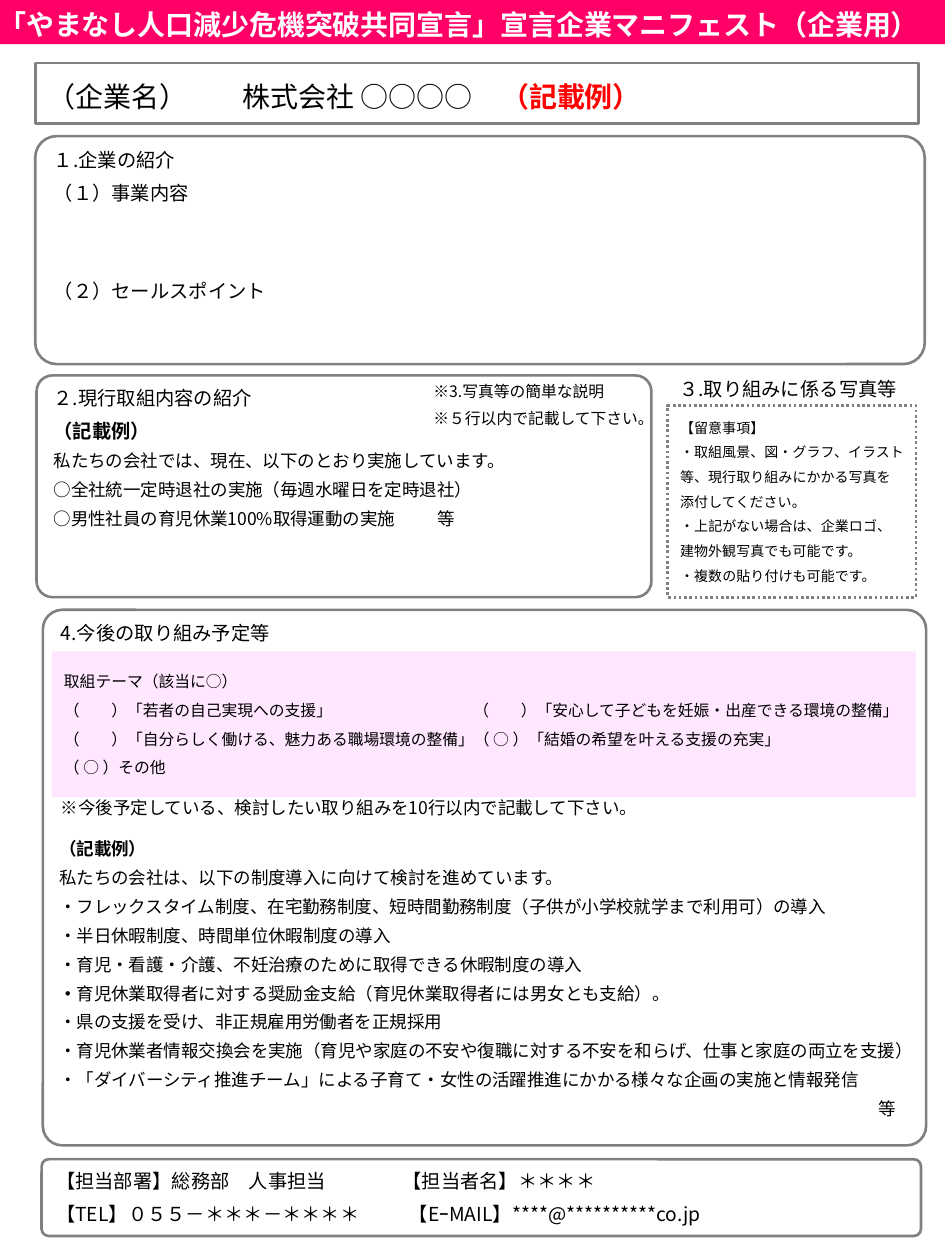
import pptx
import pptx.util
import pptx.dml.color
import pptx.enum.dml
import pptx.enum.shapes
import pptx.enum.text
from dataclasses import dataclass
from lxml import etree

Inches, Pt = pptx.util.Inches, pptx.util.Pt
RGB = pptx.dml.color.RGBColor.from_string
SHAPE = pptx.enum.shapes.MSO_SHAPE
ANCHOR = pptx.enum.text.MSO_ANCHOR
ALIGN = pptx.enum.text.PP_ALIGN
NS = "{http://schemas.openxmlformats.org/drawingml/2006/main}"


@dataclass
class Theme:
    font: str = "Noto Sans CJK JP"
    alt_font: str = "Arial"
    ink: str = "000000"
    paper: str = "FFFFFF"
    border: str = "808080"
    banner: str = "FF0066"
    panel: str = "FFE7FF"
    accent: str = "FF0000"
    title: float = 16
    heading: float = 11
    body: float = 10
    note: float = 9
    small: float = 8
    rule: float = 1.5


T = Theme()


def box(at, kind=None, fill=None, line=None, adj=None, anchor=ANCHOR.TOP, ins=(0.1, 0.05, 0.1, 0.05)):
    """Add a shape, or a text box when no kind is given."""
    at = [Inches(v) for v in at]
    if kind is None:
        sp = s.shapes.add_textbox(*at)
    else:
        sp = s.shapes.add_shape(kind, *at)
        sp.shadow.inherit = False
        if adj is not None:
            sp.adjustments[0] = adj
        if fill:
            sp.fill.solid()
            sp.fill.fore_color.rgb = RGB(fill)
        else:
            sp.fill.background()
        if line:
            sp.line.color.rgb = RGB(line)
            sp.line.width = Pt(T.rule)
        else:
            sp.line.fill.background()
    tf = sp.text_frame
    tf.word_wrap = True
    tf.vertical_anchor = anchor
    tf.margin_left, tf.margin_top, tf.margin_right, tf.margin_bottom = [Inches(v) for v in ins]
    return sp


def write(sp, lines, size, gap=5.5, color=T.ink, bold=None, align=ALIGN.LEFT, tab=None):
    """Append one paragraph per line; a line is a string or a list of runs."""
    tf = sp.text_frame
    for line in lines:
        first = not tf.paragraphs[0].runs
        p = tf.paragraphs[0] if first else tf.add_paragraph()
        p.alignment = align
        if not first:
            p.space_before = Pt(gap)
        if tab:
            tabs = etree.SubElement(p._p.get_or_add_pPr(), NS + "tabLst")
            etree.SubElement(tabs, NS + "tab", pos=str(Inches(tab)), algn="l")
        p.font.size = Pt(size)
        p.font.name = T.font
        p.font.bold = bold
        p.font.color.rgb = RGB(color)
        latin = p.font._element.find(NS + "latin")
        latin.addnext(etree.Element(NS + "ea", typeface=T.font))
        for text in [line] if isinstance(line, str) else line:
            r = p.add_run()
            r.text = text
    return p


prs = pptx.Presentation()
prs.slide_width, prs.slide_height = Inches(7.5), Inches(10)
s = prs.slides.add_slide(prs.slide_layouts[6])
card = dict(kind=SHAPE.ROUNDED_RECTANGLE, fill=T.paper, line=T.border)

# 1. Company introduction
sp = box((0.28, 1.08, 7.06, 1.81), adj=0.094, **card)
write(sp, ["１.企業の紹介", "（１）事業内容"], T.heading)
write(sp, ["（２）セールスポイント"], T.heading, gap=43)

# 4. Future plans
sp = box((0.34, 4.84, 7.01, 4.25), adj=0.036, **card)
write(sp, ["4.今後の取り組み予定等"], T.heading)
write(sp, ["※今後予定している、検討したい取り組みを10行以内で記載して下さい。"], T.body, gap=87)

# Company name
sp = box((0.28, 0.5, 7.01, 0.48), SHAPE.RECTANGLE, T.paper, T.border,
         anchor=ANCHOR.MIDDLE, ins=(0.1, 0.05, 0.1, 0))
p = write(sp, [["（企業名）\t株式会社 ○○○○", "\t（記載例）"]], T.title, tab=1.55)
etree.SubElement(p._p.pPr.find(NS + "tabLst"), NS + "tab", pos=str(Inches(3.6)), algn="l")
p.runs[1].font.bold = True
p.runs[1].font.color.rgb = RGB(T.accent)

# 2. Current activities
sp = box((0.29, 2.98, 4.88, 1.76), adj=0.072, **card)
write(sp, ["２.現行取組内容の紹介"], T.heading)
p = write(sp, ["（記載例）"], T.heading, bold=True)
p.font.name = T.alt_font
write(sp, ["私たちの会社では、現在、以下のとおり実施しています。",
           "○全社統一定時退社の実施（毎週水曜日を定時退社）",
           "○男性社員の育児休業100%取得運動の実施\t等"], T.body, gap=4.5, tab=3.05)

sp = box((3.44, 3.03, 1.89, 0.48), ins=(0, 0, 0, 0))
write(sp, ["※3.写真等の簡単な説明", "※５行以内で記載して下さい。"], T.note, gap=4.5)

# Theme choices
sp = box((0.41, 5.17, 6.86, 1.16), SHAPE.RECTANGLE, T.panel, anchor=ANCHOR.MIDDLE)
write(sp, ["取組テーマ（該当に○）",
           "（　　）「若者の自己実現への支援」\t（　　）「安心して子どもを妊娠・出産できる環境の整備」",
           "（　　）「自分らしく働ける、魅力ある職場環境の整備」（ ○ ）「結婚の希望を叶える支援の充実」",
           "（ ○ ）その他"], T.note, tab=3.25)

# Contact
sp = box((0.33, 9.2, 6.98, 0.61), adj=0.094, anchor=ANCHOR.MIDDLE, **card)
write(sp, ["【担当部署】総務部　人事担当\t【担当者名】＊＊＊＊"], T.heading, tab=2.75)
write(sp, ["【TEL】０５５－＊＊＊－＊＊＊＊\t【EｰMAIL】****@**********co.jp"], T.heading, tab=2.8)

# Example of future plans
sp = box((0.47, 6.65, 6.98, 2.28), ins=(0, 0, 0, 0))
write(sp, ["（記載例）"], T.body, bold=True)
write(sp, ["私たちの会社は、以下の制度導入に向けて検討を進めています。",
           "・フレックスタイム制度、在宅勤務制度、短時間勤務制度（子供が小学校就学まで利用可）の導入",
           "・半日休暇制度、時間単位休暇制度の導入",
           "・育児・看護・介護、不妊治療のために取得できる休暇制度の導入"], T.body, gap=4.5)
p = write(sp, [["・", "育児休業取得者に対する奨励金支給（育児休業取得者には男女とも支給）。"]], T.body, gap=4.5)
p.runs[0].font.bold = True
write(sp, ["・県の支援を受け、非正規雇用労働者を正規採用",
           "・育児休業者情報交換会を実施（育児や家庭の不安や復職に対する不安を和らげ、仕事と家庭の両立を支援）",
           "・「ダイバーシティ推進チーム」による子育て・女性の活躍推進にかかる様々な企画の実施と情報発信",
           "\t等"], T.body, gap=4.5, tab=6.5)

# 3. Photos
sp = box((5.3, 3.22, 1.97, 1.52), SHAPE.RECTANGLE, line=T.border, anchor=ANCHOR.MIDDLE)
sp.line.dash_style = pptx.enum.dml.MSO_LINE.ROUND_DOT
sp.text_frame.word_wrap = False
write(sp, ["【留意事項】", "・取組風景、図・グラフ、イラスト", "等、現行取り組みにかかる写真を",
           "添付してください。", "・上記がない場合は、企業ロゴ、", "建物外観写真でも可能です。",
           "・複数の貼り付けも可能です。"], T.small, gap=4.5)

sp = box((5.27, 2.9, 1.97, 0.37), anchor=ANCHOR.MIDDLE, ins=(0, 0.05, 0, 0.05))
write(sp, ["３.取り組みに係る写真等"], T.heading, align=ALIGN.CENTER)

# Banner
sp = box((-0.19, 0, 7.95, 0.35), SHAPE.RECTANGLE, T.banner, anchor=ANCHOR.MIDDLE,
         ins=(0.1, 0.06, 0.38, 0.02))
write(sp, ["「やまなし人口減少危機突破共同宣言」宣言企業マニフェスト（企業用）"], T.title,
      color=T.paper, bold=True, align=ALIGN.CENTER)

prs.save("out.pptx")
